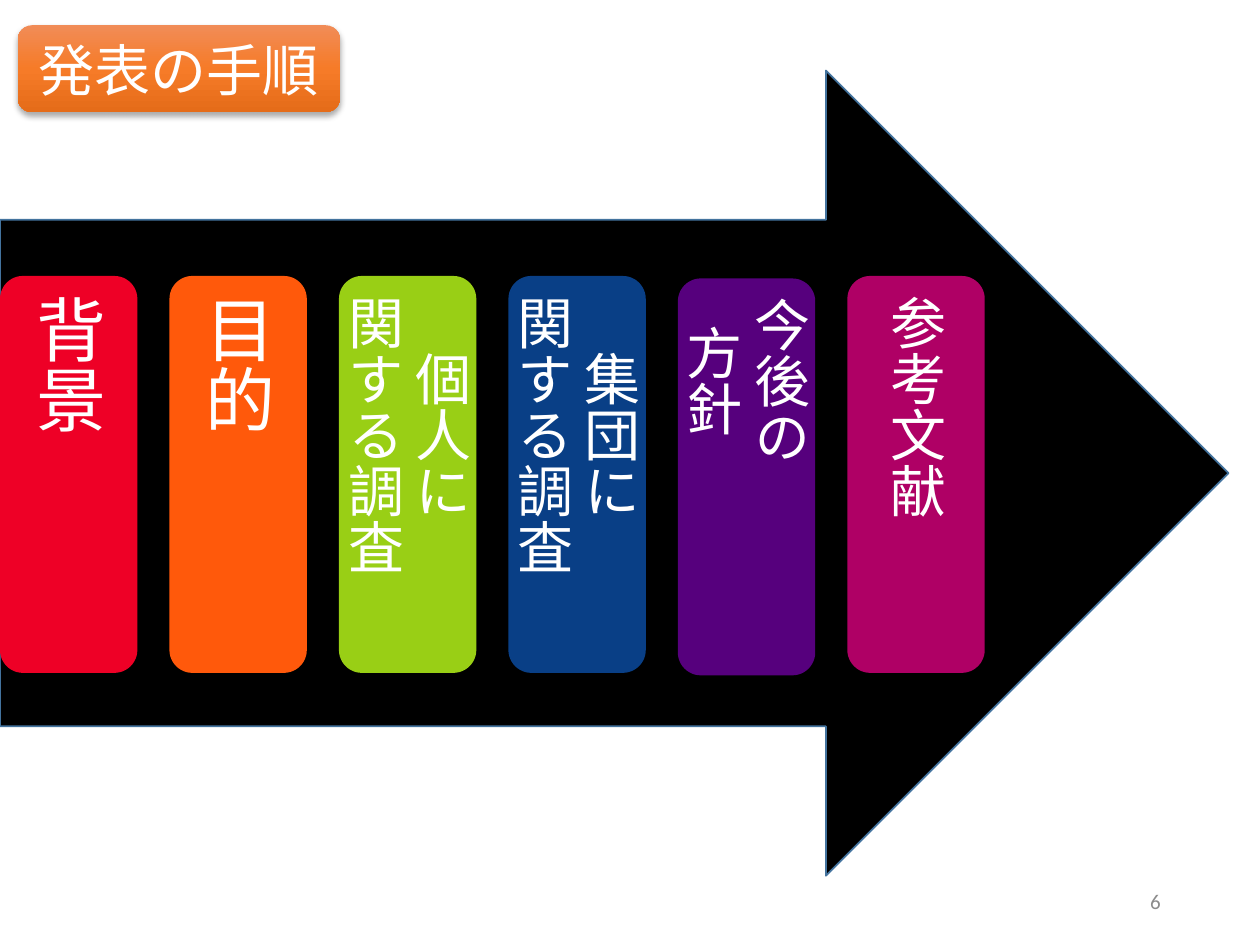
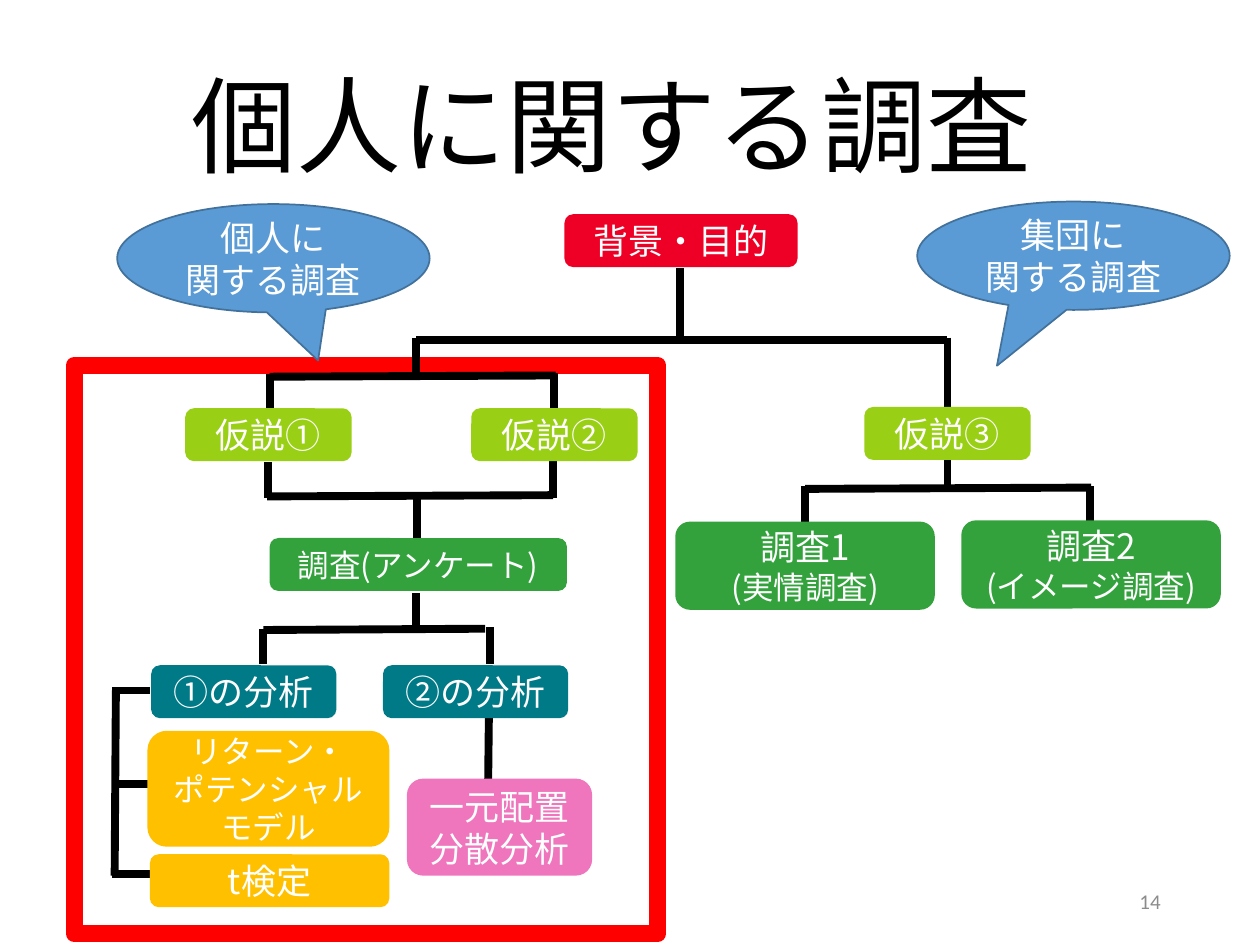
"""Build two slides: the order of the talk and the tree of the survey."""
import dataclasses
import typing

import lxml.etree
import pptx
import pptx.dml.color
import pptx.enum.shapes
import pptx.enum.text
import pptx.oxml
import pptx.oxml.ns
import pptx.util

Inches = pptx.util.Inches
Pt = pptx.util.Pt
SHAPE = pptx.enum.shapes.MSO_SHAPE
ALIGN = pptx.enum.text.PP_ALIGN
qn = pptx.oxml.ns.qn

JAPANESE, LATIN = "Noto Sans CJK JP", "Calibri"
WHITE, BLACK, GREY, FRAME_RED = "FFFFFF", "000000", "8C8C8C", "FF0000"
TOPIC_RED, LIME, GREEN, TEAL = "EE0026", "99CF15", "33A23D", "007A87"
AMBER, PINK, BLUE, BLUE_EDGE = "FFC000", "EF75BC", "5B9BD5", "42719B"
TITLE_GRADIENT = ((0, "F18C57"), (50, "F67B28"), (100, "E56C19"))


class Line(typing.NamedTuple):
    """One paragraph of text with its size."""
    text: str
    size: float = 20


class Segment(typing.NamedTuple):
    """A straight branch of the tree."""
    x1: float
    y1: float
    x2: float
    y2: float


@dataclasses.dataclass(frozen=True)
class Node:
    """A filled shape with text, measured in inches."""
    left: float
    top: float
    width: float
    height: float
    fill: str
    lines: tuple[Line, ...] = ()
    kind: typing.Any = SHAPE.ROUNDED_RECTANGLE
    adjustments: tuple[float, ...] = ()
    edge: str = ""
    edge_width: float = 1
    vertical: bool = False
    shadow: bool = False


class Step(typing.NamedTuple):
    """One step of the talk."""
    fill: str
    lines: tuple[Line, ...]
    drop: float = 0


STEPS = (
    Step(TOPIC_RED, (Line("背景", 40),)),
    Step("FF590B", (Line("目的", 40),)),
    Step(LIME, (Line("個人に", 32), Line("関する調査", 32))),
    Step("093F86", (Line("集団に", 32), Line("関する調査", 32))),
    Step("56007D", (Line("今後の", 32), Line("方針", 32)), 0.02),
    Step("AF0065", (Line("参考文献", 32),)),
)
STEP_PITCH = 1.345

BRANCHES = (
    Segment(5.4, 2.13, 5.4, 2.7), Segment(7.52, 2.7, 3.3, 2.7),
    Segment(3.3, 2.68, 3.3, 2.96), Segment(7.52, 2.68, 7.52, 3.25),
    Segment(4.41, 2.98, 2.14, 2.99), Segment(2.14, 2.97, 2.14, 3.26),
    Segment(4.4, 2.96, 4.4, 3.25), Segment(2.13, 3.95, 2.13, 3.67),
    Segment(4.39, 3.95, 4.39, 3.66), Segment(2.12, 3.94, 4.39, 3.93),
    Segment(3.31, 3.93, 3.31, 4.5), Segment(3.3, 4.71, 3.3, 4.99),
    Segment(3.85, 4.99, 2.09, 5), Segment(2.09, 4.99, 2.09, 5.27),
    Segment(3.89, 4.98, 3.89, 5.27), Segment(3.88, 5.69, 3.87, 6.62),
    Segment(0.92, 5.48, 0.91, 6.95),
    *(Segment(1.19, y, 0.89, y) for y in (5.48, 6.22, 6.94)),
    Segment(7.52, 3.59, 7.52, 3.88), Segment(8.66, 3.87, 6.39, 3.88),
    Segment(6.39, 3.86, 6.39, 4.15), Segment(8.65, 3.86, 8.65, 4.14),
)


def hypothesis(left: float, top: float, text: str) -> Node:
    """Describe a hypothesis box."""
    return Node(left, top, 1.32, 0.42, LIME, (Line(text),))


def analysis(left: float, text: str) -> Node:
    """Describe an analysis box."""
    return Node(left, 5.28, 1.47, 0.42, TEAL, (Line(text),))


def survey(left: float, top: float, text: str, detail: str) -> Node:
    """Describe a group survey box."""
    return Node(left, top, 2.06, 0.7, GREEN, (Line(text), Line(detail, 18)))


def callout(left: float, top: float, text: str, tip: tuple[float, float]) -> Node:
    """Describe a speech balloon naming a survey."""
    return Node(left, top, 2.48, 0.86, BLUE, (Line(text), Line("関する調査")),
                SHAPE.OVAL_CALLOUT, tip, BLUE_EDGE)


TREE = (
    Node(4.48, 1.7, 1.85, 0.42, TOPIC_RED, (Line("背景・目的"),)),
    hypothesis(1.47, 3.24, "仮説①"),
    hypothesis(3.74, 3.24, "仮説②"),
    hypothesis(6.86, 3.23, "仮説③"),
    Node(2.14, 4.27, 2.36, 0.42, GREEN, (Line("調査(アンケート)", 18),)),
    analysis(1.2, "①の分析"),
    analysis(3.04, "②の分析"),
    Node(1.17, 5.8, 1.92, 0.92, AMBER,
         tuple(Line(text, 18) for text in ("リターン・", "ポテンシャル", "モデル"))),
    Node(1.19, 6.78, 1.9, 0.42, AMBER, (Line("t検定"),)),
    Node(3.23, 6.18, 1.47, 0.77, PINK, (Line("一元配置"), Line("分散分析"))),
    survey(5.36, 4.14, "調査1", "(実情調査)"),
    survey(7.63, 4.13, "調査2", "(イメージ調査)"),
    callout(0.93, 1.62, "個人に", (0.143, 0.944)),
    callout(7.28, 1.6, "集団に", (-0.245, 1.016)),
)


def rgb(value: str) -> pptx.dml.color.RGBColor:
    """Turn a hex string into a colour."""
    return pptx.dml.color.RGBColor.from_string(value)


def write(frame: typing.Any, lines: tuple[Line, ...], color: str,
          align: typing.Any, font: str = JAPANESE) -> None:
    """Write each line as a paragraph with one run."""
    for index, line in enumerate(lines):
        paragraph = frame.add_paragraph() if index else frame.paragraphs[0]
        paragraph.alignment = align
        run = paragraph.add_run()
        run.text = line.text
        run.font.size = Pt(line.size)
        run.font.name = font
        run.font.color.rgb = rgb(color)
        east_asian = lxml.etree.SubElement(run.font._element, qn("a:ea"))
        east_asian.set("typeface", font)


def cast_shadow(shape: typing.Any) -> None:
    """Give a shape a soft shadow below it."""
    effects = shape._element.spPr.find(qn("a:effectLst"))
    outer = lxml.etree.SubElement(
        effects, qn("a:outerShdw"), blurRad=str(Pt(3.5)), dist=str(Pt(2.2)),
        dir="5400000", rotWithShape="0")
    tint = lxml.etree.SubElement(outer, qn("a:srgbClr"), val=BLACK)
    lxml.etree.SubElement(tint, qn("a:alpha"), val="32000")


def draw_node(slide: typing.Any, node: Node) -> typing.Any:
    """Draw a shape with its fill, edge and text."""
    shape = slide.shapes.add_shape(
        node.kind, Inches(node.left), Inches(node.top),
        Inches(node.width), Inches(node.height))
    shape.shadow.inherit = False
    for index, value in enumerate(node.adjustments):
        shape.adjustments[index] = value
    if node.fill:
        shape.fill.solid()
        shape.fill.fore_color.rgb = rgb(node.fill)
    else:
        shape.fill.background()
    if node.edge:
        shape.line.color.rgb = rgb(node.edge)
        shape.line.width = Pt(node.edge_width)
    else:
        shape.line.fill.background()
    if node.shadow:
        cast_shadow(shape)
    frame = shape.text_frame
    frame.word_wrap = True
    frame.vertical_anchor = pptx.enum.text.MSO_ANCHOR.MIDDLE
    if node.vertical:
        frame._txBody.bodyPr.set("vert", "eaVert")
    write(frame, node.lines, WHITE, ALIGN.CENTER)
    return shape


def draw_branch(slide: typing.Any, branch: Segment) -> None:
    """Draw one thick black line."""
    connector = slide.shapes.add_connector(
        pptx.enum.shapes.MSO_CONNECTOR.STRAIGHT, *(Inches(value) for value in branch))
    connector.line.color.rgb = rgb(BLACK)
    connector.line.width = Pt(4.5)
    lxml.etree.SubElement(connector._element.spPr, qn("a:effectLst"))


def draw_page_number(slide: typing.Any, number: int) -> None:
    """Write the page number at the lower right."""
    frame = slide.shapes.add_textbox(
        Inches(7.06), Inches(6.95), Inches(2.25), Inches(0.4)).text_frame
    frame.word_wrap = True
    frame.vertical_anchor = pptx.enum.text.MSO_ANCHOR.MIDDLE
    write(frame, (Line(str(number), 12),), GREY, ALIGN.RIGHT, LATIN)


def build_outline(slide: typing.Any) -> None:
    """Draw the steps of the talk along an arrow."""
    draw_node(slide, Node(0, 0.56, 9.75, 6.39, BLACK, kind=SHAPE.RIGHT_ARROW,
                          adjustments=(0.629, 0.5), edge="43739E"))
    for index, step in enumerate(STEPS):
        draw_node(slide, Node(index * STEP_PITCH, 2.19 + step.drop, 1.09, 3.15, step.fill,
                              step.lines, vertical=True, shadow=True))
    draw_page_number(slide, 6)
    heading = draw_node(slide, Node(0.14, 0.2, 2.56, 0.69, TITLE_GRADIENT[0][1],
                                    (Line("発表の手順", 32),), shadow=True))
    heading.fill.gradient()
    heading.fill.gradient_angle = 270
    stops = heading._element.spPr.find(qn("a:gradFill")).find(qn("a:gsLst"))
    for stop in list(stops):
        stops.remove(stop)
    for position, color in TITLE_GRADIENT:
        stop = lxml.etree.SubElement(stops, qn("a:gs"), pos=str(position * 1000))
        lxml.etree.SubElement(stop, qn("a:srgbClr"), val=color)


def build_survey_tree(slide: typing.Any) -> None:
    """Draw the tree from background to analyses."""
    draw_page_number(slide, 14)
    title = slide.shapes.add_textbox(
        Inches(1.42), Inches(0.43), Inches(6.93), Inches(1.11)).text_frame
    title.word_wrap = False
    title.auto_size = pptx.enum.text.MSO_AUTO_SIZE.SHAPE_TO_FIT_TEXT
    write(title, (Line("個人に関する調査", 60),), BLACK, ALIGN.LEFT)
    draw_node(slide, Node(0.59, 2.9, 4.63, 4.51, "", kind=SHAPE.RECTANGLE,
                          edge=FRAME_RED, edge_width=10))
    for branch in BRANCHES:
        draw_branch(slide, branch)
    for node in TREE:
        draw_node(slide, node)


def main() -> None:
    """Build and save the presentation."""
    deck = pptx.Presentation()
    deck.slide_width, deck.slide_height = Inches(10), Inches(7.5)
    for build in (build_outline, build_survey_tree):
        build(deck.slides.add_slide(deck.slide_layouts[6]))
    deck.save("out.pptx")


if __name__ == "__main__":
    main()
